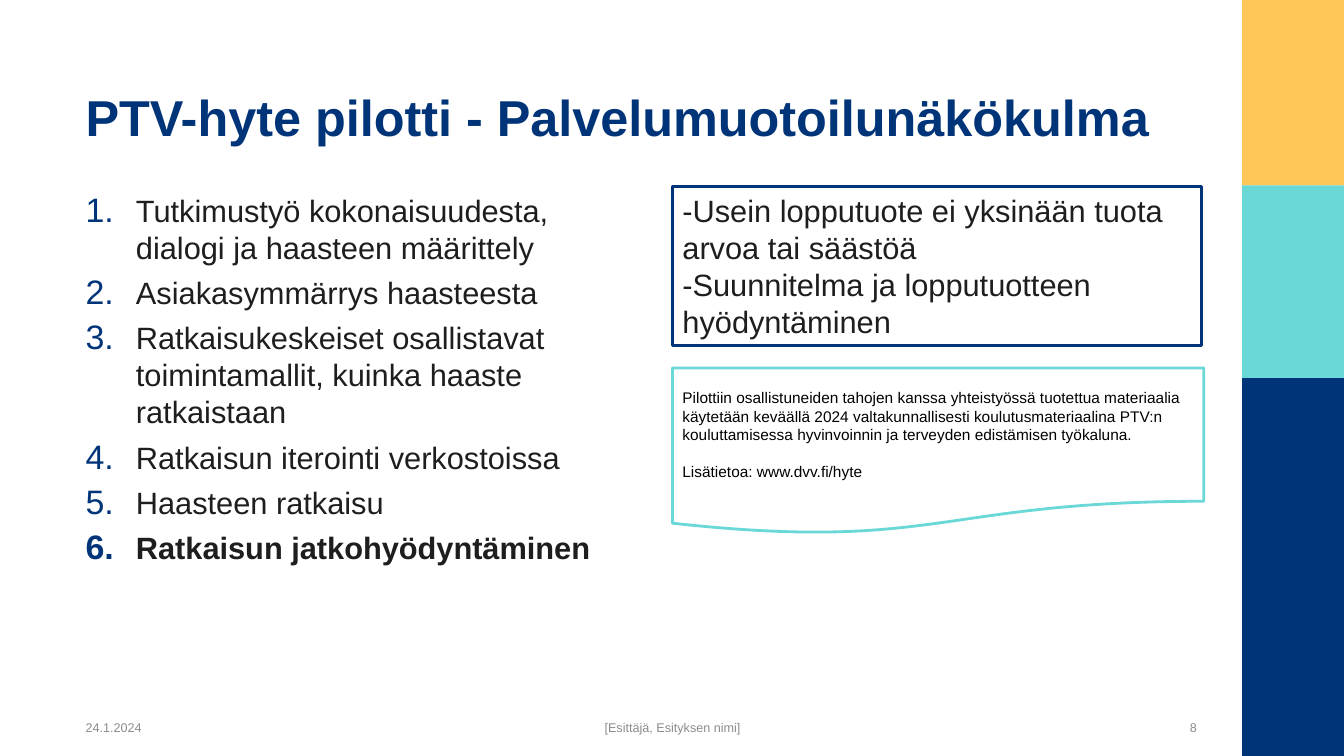
"""Build the slide on the service design view of the PTV-hyte pilot."""
from dataclasses import dataclass, field
from typing import Any

from lxml import etree
from pptx import Presentation
from pptx.dml.color import RGBColor
from pptx.enum.shapes import MSO_SHAPE
from pptx.enum.text import MSO_ANCHOR, MSO_AUTO_SIZE, PP_ALIGN
from pptx.oxml.ns import qn
from pptx.util import Pt

EMU_PER_PX = 9144
RECTANGLE, DOCUMENT = MSO_SHAPE.RECTANGLE, MSO_SHAPE.FLOWCHART_DOCUMENT
TOP, MIDDLE, BOTTOM = MSO_ANCHOR.TOP, MSO_ANCHOR.MIDDLE, MSO_ANCHOR.BOTTOM
LEFT, CENTER, RIGHT = PP_ALIGN.LEFT, PP_ALIGN.CENTER, PP_ALIGN.RIGHT
FIXED, GROW = MSO_AUTO_SIZE.NONE, MSO_AUTO_SIZE.SHAPE_TO_FIT_TEXT

COLORS = {
    "navy": "003479", "yellow": "FFC658", "turquoise": "69D8D7", "white": "FFFFFF",
    "ink": "1E1E1E", "grey": "8C8C8C", "black": "000000",
}
FOOTER_SPACING = {"line_spacing": 0.9, "space_after": Pt(6)}


@dataclass(frozen=True)
class Block:
    box: tuple[int, int, int, int]
    lines: tuple[str, ...] = ()
    size: int = 22
    color: str = "ink"
    bold_lines: tuple[int, ...] = ()
    numbered: bool = False
    gap: int = 0
    anchor: Any = TOP
    fit: Any = FIXED
    paragraph: dict[str, Any] = field(default_factory=dict)
    geometry: Any = None
    fill: str = "white"
    outline: str | None = None


BLOCKS = (
    Block((1232, 0, 101, 184), geometry=RECTANGLE, fill="yellow"),
    Block((1232, 184, 101, 191), geometry=RECTANGLE, fill="turquoise"),
    Block((1232, 375, 101, 375), geometry=RECTANGLE, fill="navy"),
    Block((75, 185, 551, 504), (
        "Tutkimustyö kokonaisuudesta, dialogi ja haasteen määrittely",
        "Asiakasymmärrys haasteesta",
        "Ratkaisukeskeiset osallistavat toimintamallit, kuinka haaste ratkaistaan",
        "Ratkaisun iterointi verkostoissa",
        "Haasteen ratkaisu",
        "Ratkaisun jatkohyödyntäminen",
    ), bold_lines=(5,), numbered=True, gap=6),
    Block((75, 711, 165, 24), ("24.1.2024",), 9, "grey", anchor=MIDDLE,
          paragraph=FOOTER_SPACING),
    Block((349, 711, 636, 24), ("[Esittäjä, Esityksen nimi]",), 9, "grey", anchor=MIDDLE,
          paragraph=FOOTER_SPACING | {"alignment": CENTER}),
    Block((1106, 711, 91, 24), ("8",), 9, "grey", anchor=MIDDLE,
          paragraph=FOOTER_SPACING | {"alignment": RIGHT}),
    Block((75, 16, 1122, 134), ("PTV-hyte pilotti - Palvelumuotoilunäkökulma",), 36, "navy",
          bold_lines=(0,), anchor=BOTTOM),
    Block((667, 185, 525, 158), (
        "-Usein lopputuote ei yksinään tuota arvoa tai säästöä",
        "-Suunnitelma ja lopputuotteen hyödyntäminen",
    ), fit=GROW, geometry=RECTANGLE, outline="navy"),
    Block((667, 365, 527, 165), (
        "Pilottiin osallistuneiden tahojen kanssa yhteistyössä tuotettua materiaalia "
        "käytetään keväällä 2024 valtakunnallisesti koulutusmateriaalina PTV:n "
        "kouluttamisessa hyvinvoinnin ja terveyden edistämisen työkaluna.",
        "Lisätietoa: www.dvv.fi/hyte",
    ), 11, "black", gap=13, anchor=MIDDLE, geometry=DOCUMENT, outline="turquoise"),
)


def px(length: int) -> int:
    return length * EMU_PER_PX


def rgb(name: str) -> RGBColor:
    return RGBColor.from_string(COLORS[name])


def apply_format(target: Any, values: dict[str, Any]) -> None:
    for name, value in values.items():
        setattr(target, name, value)


def add_number(paragraph: Any) -> None:
    properties = paragraph._p.get_or_add_pPr()
    properties.set("marL", str(px(50)))
    properties.set("indent", str(-px(50)))
    tint = etree.SubElement(properties, qn("a:buClr"))
    etree.SubElement(tint, qn("a:srgbClr"), val=COLORS["navy"])
    etree.SubElement(properties, qn("a:buSzPct"), val="110000")
    etree.SubElement(properties, qn("a:buFont"), typeface="+mj-lt")
    etree.SubElement(properties, qn("a:buAutoNum"), type="arabicPeriod")


def write_lines(frame: Any, block: Block) -> None:
    apply_format(frame, {"word_wrap": True, "auto_size": block.fit,
                         "vertical_anchor": block.anchor})
    for index, line in enumerate(block.lines):
        paragraph = frame.add_paragraph() if index else frame.paragraphs[0]
        if block.numbered:
            add_number(paragraph)
        spacing = {"space_before": Pt(block.gap if index else 0)}
        apply_format(paragraph, {"alignment": LEFT} | spacing | block.paragraph)
        run = paragraph.add_run()
        run.text = line
        apply_format(run.font, {"name": "Arial", "size": Pt(block.size),
                                "bold": index in block.bold_lines})
        run.font.color.rgb = rgb(block.color)


def draw_block(slide: Any, block: Block) -> None:
    bounds = [px(length) for length in block.box]
    if block.geometry is None:
        holder = slide.shapes.add_textbox(*bounds)
    else:
        holder = slide.shapes.add_shape(block.geometry, *bounds)
        holder.shadow.inherit = False
        holder.fill.solid()
        holder.fill.fore_color.rgb = rgb(block.fill)
        if block.outline:
            holder.line.color.rgb = rgb(block.outline)
            holder.line.width = Pt(2)
        else:
            holder.line.fill.background()
    if block.lines:
        write_lines(holder.text_frame, block)


def main() -> None:
    deck = Presentation()
    apply_format(deck, {"slide_width": px(1333), "slide_height": px(750)})
    slide = deck.slides.add_slide(deck.slide_layouts[6])
    for block in BLOCKS:
        draw_block(slide, block)
    deck.save("out.pptx")


if __name__ == "__main__":
    main()
